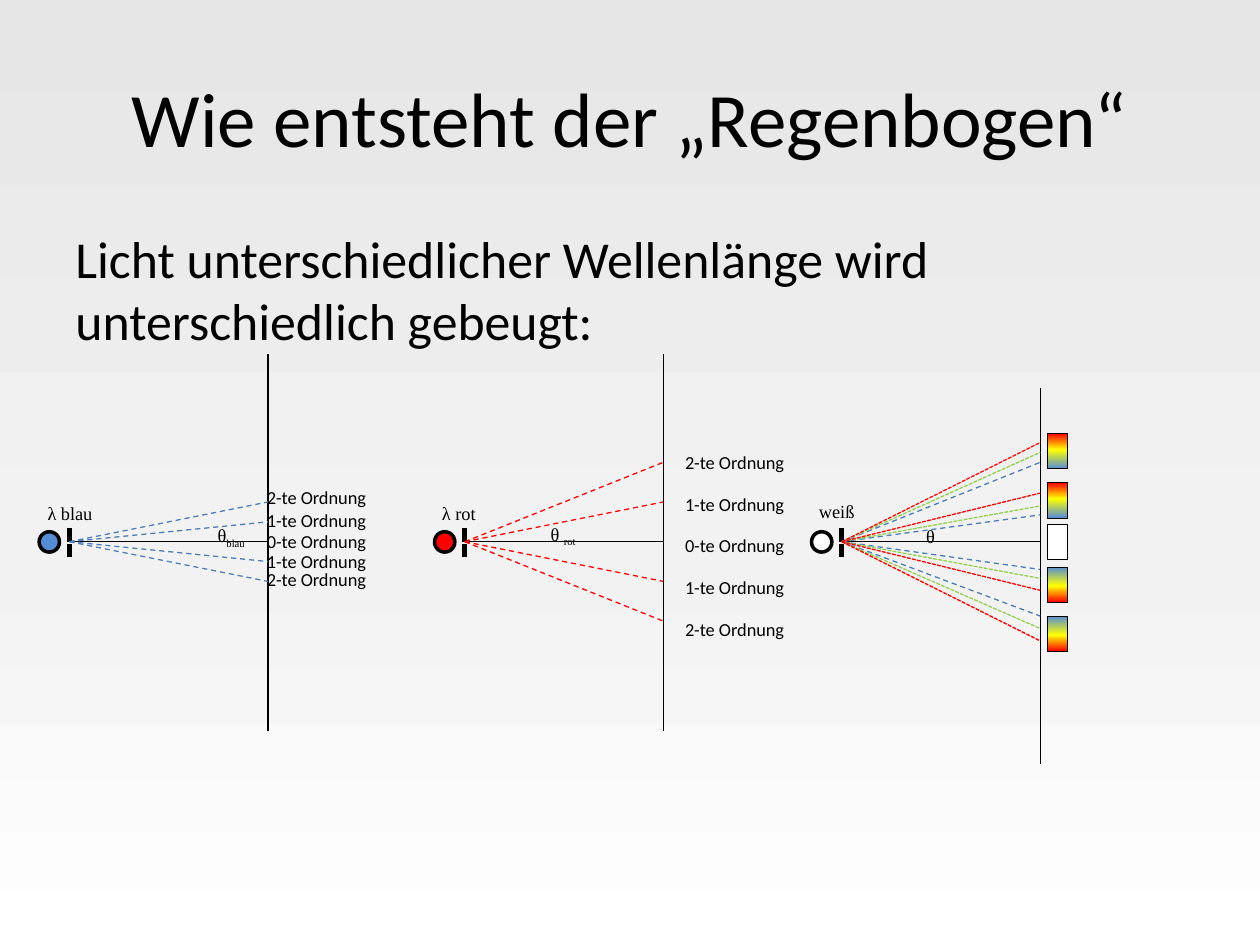
"""Build the slide on how light of different wavelengths is diffracted."""
from dataclasses import dataclass

from lxml.etree import SubElement
from pptx import Presentation
from pptx.dml.color import RGBColor
from pptx.enum.dml import MSO_LINE
from pptx.enum.shapes import MSO_CONNECTOR, MSO_SHAPE
from pptx.enum.text import MSO_ANCHOR, PP_ALIGN
from pptx.oxml.ns import qn
from pptx.util import Cm, Pt


@dataclass(frozen=True)
class Theme:
    black: str = "000000"
    white: str = "FFFFFF"
    red: str = "FF0000"
    green: str = "92D050"
    blue: str = "558ED5"
    blue_ray: str = "4B7EBC"
    background: tuple = ((0, "E6E6E6"), (59, "F2F2F2"), (100, "FFFFFF"))
    spectrum: tuple = ((0, "FF0000"), (46, "FFFF00"), (100, "558ED5"))
    sans: str = "Calibri"
    serif: str = "Times New Roman"
    title_size: float = 44
    body_size: float = 29.6
    label_size: float = 10.5
    thin: float = 0.75
    frame: float = 0.25
    ring: float = 2
    slit: float = 3


AXIS = 10.92
SCREEN_DISTANCE = 4.0
SCREEN_HEIGHT = 7.59
LABEL_HEIGHT = 0.71
ORDERS = (2, 1, 0, 1, 2)


def add_text(paragraph, text, *, font, size, color, subscript=False):
    run = paragraph.add_run()
    run.text = text
    run.font.name = font
    run.font.size = Pt(size)
    run.font.color.rgb = RGBColor.from_string(color)
    if subscript:
        run.font._element.set("baseline", "-25000")


def set_gradient(fill, element, stops):
    fill.gradient()
    fill.gradient_angle = 270
    stop_list = element.find(".//" + qn("a:gsLst"))
    for stop in list(stop_list):
        stop_list.remove(stop)
    for position, color in stops:
        stop = SubElement(stop_list, qn("a:gs"), pos=str(position * 1000))
        SubElement(stop, qn("a:srgbClr"), val=color)


class SlideBuilder:
    def __init__(self, slide, theme):
        self.slide = slide
        self.theme = theme

    def background(self):
        set_gradient(self.slide.background.fill, self.slide._element, self.theme.background)

    def text(self, left, top, width, height, text, *, font, size, subscript="",
             wrap=False, inset=True, align=PP_ALIGN.LEFT, anchor=MSO_ANCHOR.TOP):
        box = self.slide.shapes.add_textbox(Cm(left), Cm(top), Cm(width), Cm(height))
        frame = box.text_frame
        frame.word_wrap = wrap
        frame.vertical_anchor = anchor
        if not inset:
            frame.margin_left = frame.margin_right = 0
            frame.margin_top = frame.margin_bottom = 0
        paragraph = frame.paragraphs[0]
        paragraph.alignment = align
        style = dict(font=font, size=size, color=self.theme.black)
        add_text(paragraph, text, **style)
        if subscript:
            add_text(paragraph, subscript, subscript=True, **style)

    def label(self, left, top, width, text, font, **options):
        self.text(left, top, width, LABEL_HEIGHT, text, font=font,
                  size=self.theme.label_size, **options)

    def line(self, start, end, color, width, dash=None):
        points = [Cm(value) for value in (*start, *end)]
        line = self.slide.shapes.add_connector(MSO_CONNECTOR.STRAIGHT, *points)
        line.line.color.rgb = RGBColor.from_string(color)
        line.line.width = Pt(width)
        if dash:
            line.line.dash_style = dash
        SubElement(line._element.spPr, qn("a:effectLst"))

    def shape(self, kind, left, top, width, height, fill, outline, rotation=0):
        shape = self.slide.shapes.add_shape(kind, Cm(left), Cm(top), Cm(width), Cm(height))
        shape.shadow.inherit = False
        shape.rotation = rotation
        shape.line.color.rgb = RGBColor.from_string(self.theme.black)
        shape.line.width = Pt(outline)
        if isinstance(fill, tuple):
            set_gradient(shape.fill, shape._element, fill)
        else:
            shape.fill.solid()
            shape.fill.fore_color.rgb = RGBColor.from_string(fill)

    def experiment(self, slit, screen_top, fill, rays):
        theme = self.theme
        screen = slit + SCREEN_DISTANCE
        self.shape(MSO_SHAPE.OVAL, slit - 0.61, AXIS - 0.2, 0.41, 0.41, fill, theme.ring)
        self.line((slit, AXIS), (screen, AXIS), theme.black, theme.thin)
        self.line((screen, screen_top), (screen, screen_top + SCREEN_HEIGHT),
                  theme.black, theme.thin)
        for top, bottom in ((-0.28, 0), (0.05, 0.31)):
            self.line((slit, AXIS + top), (slit, AXIS + bottom), theme.black, theme.slit)
        for color, dash, offsets in rays:
            for offset in offsets:
                self.line((slit, AXIS), (screen, AXIS + offset), color, theme.thin, dash)

    def order_labels(self, left, tops):
        for order, top in zip(ORDERS, tops):
            self.label(left, top, 2.57, f"{order}-te Ordnung", self.theme.sans)

    def spectra(self, left, tops):
        theme = self.theme
        for index, top in enumerate(tops):
            fill = theme.white if ORDERS[index] == 0 else theme.spectrum
            self.shape(MSO_SHAPE.RECTANGLE, left, top, 0.41, 0.71, fill, theme.frame,
                       rotation=180 if index > 2 else 0)


def main():
    presentation = Presentation()
    presentation.slide_width, presentation.slide_height = Cm(25.4), Cm(19.05)
    theme = Theme()
    builder = SlideBuilder(presentation.slides.add_slide(presentation.slide_layouts[6]), theme)
    builder.background()
    builder.text(1.27, 0.76, 22.86, 3.18, "Wie entsteht der „Regenbogen“", font=theme.sans,
                 size=theme.title_size, wrap=True, align=PP_ALIGN.CENTER,
                 anchor=MSO_ANCHOR.MIDDLE)
    builder.text(1.27, 4.45, 22.86, 2.69,
                 "Licht unterschiedlicher Wellenlänge wird unterschiedlich gebeugt:",
                 font=theme.sans, size=theme.body_size, wrap=True)

    dash, short_dash = MSO_LINE.DASH, MSO_LINE.SQUARE_DOT
    builder.experiment(1.4, 7.14, theme.blue,
                       [(theme.blue_ray, dash, (-0.8, -0.4, 0.4, 0.8))])
    builder.experiment(9.37, 7.14, theme.red,
                       [(theme.red, dash, (-1.6, -0.8, 0.8, 1.6))])
    builder.experiment(16.97, 7.82, theme.white, [
        (theme.blue_ray, dash, (-1.6, -0.54, 0.56, 1.5)),
        (theme.green, short_dash, (-1.8, -0.72, 0.74, 1.75)),
        (theme.red, short_dash, (-2, -0.98, 0.98, 2)),
    ])

    for left, top, width, text in ((0.71, 10, 1.42, "λ blau"), (8.66, 10, 1.19, "λ rot"),
                                   (16.26, 9.96, 1.24, "weiß")):
        builder.label(left, top, width, text, theme.serif)
    for left, top, width, text, subscript in ((4.39, 10.57, 0.61, "θ", "blau"),
                                              (11.1, 10.54, 0.56, "θ ", "rot"),
                                              (18.67, 10.59, 0.18, "θ", "")):
        builder.label(left, top, width, text, theme.serif, subscript=subscript, inset=False)

    builder.order_labels(5.13, (9.68, 10.13, 10.57, 10.97, 11.33))
    builder.order_labels(13.56, [8.97 + 0.84 * row for row in range(5)])
    builder.spectra(21.11, (8.74, 9.73, 10.57, 11.43, 12.42))
    presentation.save("out.pptx")


if __name__ == "__main__":
    main()
